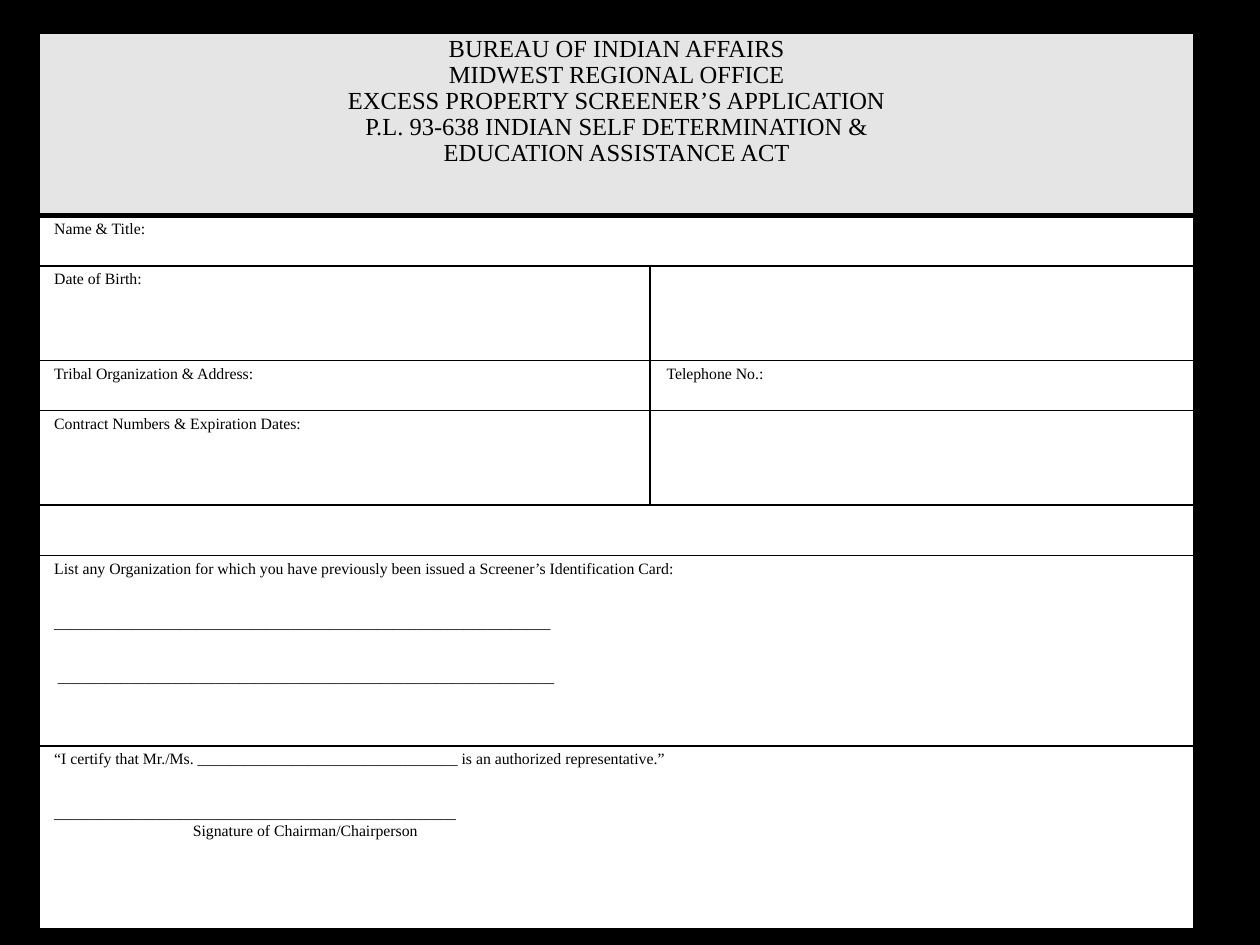
import pptx
import pptx.util
import pptx.dml.color
import pptx.enum.text
import pptx.oxml
import pptx.oxml.ns

Inches, Pt = pptx.util.Inches, pptx.util.Pt
COLORS = {"ink": "000000", "header": "E5E5E5", "paper": "FFFFFF"}
FONT = "Times New Roman"
GAP = 20.7
COLUMN_WIDTHS = (4.86, 4.33)

# text, space before in points, left indent in inches
HEADER = [
    "BUREAU OF INDIAN AFFAIRS",
    "MIDWEST REGIONAL OFFICE",
    "EXCESS PROPERTY SCREENER’S APPLICATION",
    "P.L. 93-638 INDIAN SELF DETERMINATION &",
    "EDUCATION ASSISTANCE ACT",
]
PREVIOUS_CARDS = [
    "List any Organization for which you have previously been issued a Screener’s Identification Card:",
    ("_" * 63, GAP, 0),
    ("_" * 63, GAP, 0.03),
]
CERTIFICATION = [
    "“I certify that Mr./Ms. " + "_" * 33 + " is an authorized representative.”",
    ("_" * 51, GAP, 0),
    ("Signature of Chairman/Chairperson", 0, 1.1),
]
ROWS = [
    (1.46, [HEADER]),
    (0.4, [["Name & Title:"]]),
    (0.75, [["Date of Birth:"], []]),
    (0.4, [["Tribal Organization & Address:"], ["Telephone No.:"]]),
    (0.75, [["Contract Numbers & Expiration Dates:"], []]),
    (0.4, [[]]),
    (1.51, [PREVIOUS_CARDS]),
    (1.45, [CERTIFICATION]),
]
CELL_FORMAT = {
    "margin_left": Inches(0.13), "margin_right": Inches(0.13),
    "margin_top": Inches(0.04), "margin_bottom": Inches(0.04),
}
HEADER_FORMAT = {"alignment": pptx.enum.text.PP_ALIGN.CENTER, "line_spacing": 0.96}
BODY_FORMAT = {"alignment": pptx.enum.text.PP_ALIGN.LEFT}
TABLE_FORMAT = {"first_row": False, "horz_banding": False}


def apply_format(target, values):
    for name, value in values.items():
        setattr(target, name, value)


def rgb(name):
    return pptx.dml.color.RGBColor.from_string(COLORS[name])


def set_borders(cell, widths):
    properties = cell._tc.get_or_add_tcPr()
    for index, side in enumerate("LRTB"):
        properties.insert(index, pptx.oxml.parse_xml(
            f'<a:ln{side} {pptx.oxml.ns.nsdecls("a")} w="{Pt(widths[side])}">'
            f'<a:solidFill><a:srgbClr val="{COLORS["ink"]}"/></a:solidFill></a:ln{side}>'))


def write_lines(cell, lines, size, para_format):
    for index, line in enumerate(lines):
        text, before, indent = (line, 0, 0) if isinstance(line, str) else line
        frame = cell.text_frame
        para = frame.add_paragraph() if index else frame.paragraphs[0]
        apply_format(para, {**para_format, "space_before": Pt(before)})
        if indent:
            para._p.get_or_add_pPr().set("marL", str(Inches(indent)))
        span = para.add_run()
        span.text = text
        apply_format(span.font, {"name": FONT, "size": Pt(size), "bold": False})
        span.font.color.rgb = rgb("ink")


def main():
    deck = pptx.Presentation()
    deck.slide_width, deck.slide_height = Inches(10), Inches(7.5)
    page = deck.slides.add_slide(deck.slide_layouts[6])
    page.background.fill.solid()
    page.background.fill.fore_color.rgb = rgb("ink")

    form = page.shapes.add_table(
        len(ROWS), len(COLUMN_WIDTHS), Inches(0.3), Inches(0.25),
        Inches(sum(COLUMN_WIDTHS)), Inches(sum(height for height, _ in ROWS))).table
    apply_format(form, TABLE_FORMAT)
    for column, width in zip(form.columns, COLUMN_WIDTHS):
        column.width = Inches(width)

    last = len(COLUMN_WIDTHS) - 1
    for row, (height, contents) in enumerate(ROWS):
        form.rows[row].height = Inches(height)
        merged = len(contents) == 1
        if merged:
            form.cell(row, 0).merge(form.cell(row, last))
        for column in range(last + 1):
            cell = form.cell(row, column)
            apply_format(cell, CELL_FORMAT)
            cell.fill.solid()
            cell.fill.fore_color.rgb = rgb("paper" if row else "header")
            set_borders(cell, {
                "L": 3 if column == 0 else 1,
                "R": 3 if merged or column == last else 1,
                "T": 3 if row <= 1 else 1,
                "B": 3 if row == 0 else 1,
            })
        for column, lines in enumerate(contents):
            size, para_format = (9, BODY_FORMAT) if row else (14, HEADER_FORMAT)
            write_lines(form.cell(row, column), lines, size, para_format)

    deck.save("out.pptx")


if __name__ == "__main__":
    main()
